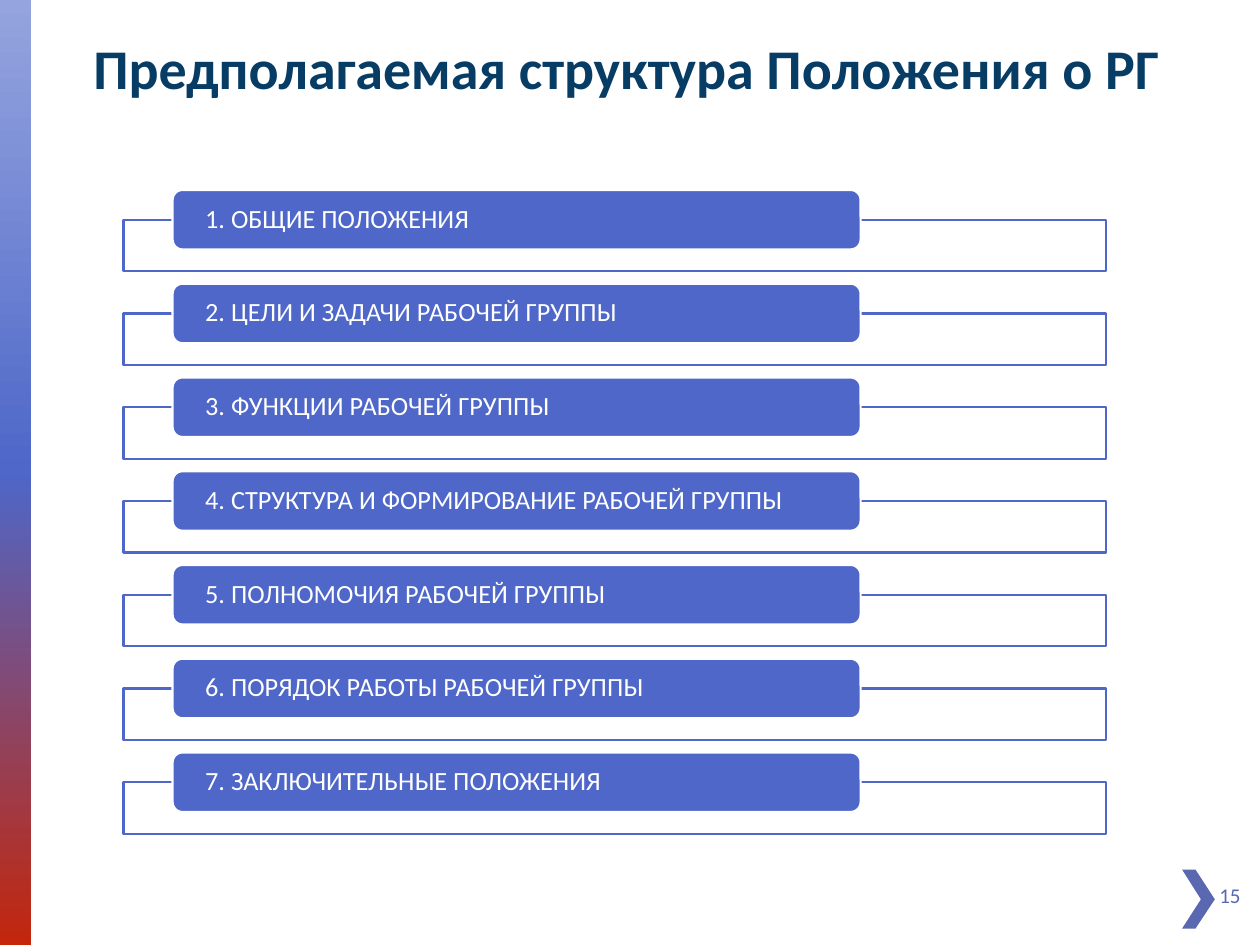
from copy import deepcopy
from dataclasses import dataclass

from lxml import etree
from pptx import Presentation, util as u
from pptx.dml.color import RGBColor
from pptx.enum import shapes, text
from pptx.oxml import ns

COLORS = {
    "blue": "4E67C8",
    "light_blue": "95A4DE",
    "red": "C3260C",
    "marker": "5968B0",
    "title": "073C65",
    "white": "FFFFFF",
}
FONT = "Calibri"
ROW_PITCH = 1.89
SECTIONS = [
    "ОБЩИЕ ПОЛОЖЕНИЯ",
    "ЦЕЛИ И ЗАДАЧИ РАБОЧЕЙ ГРУППЫ",
    "ФУНКЦИИ РАБОЧЕЙ ГРУППЫ",
    "СТРУКТУРА И ФОРМИРОВАНИЕ РАБОЧЕЙ ГРУППЫ",
    "ПОЛНОМОЧИЯ РАБОЧЕЙ ГРУППЫ",
    "ПОРЯДОК РАБОТЫ РАБОЧЕЙ ГРУППЫ",
    "ЗАКЛЮЧИТЕЛЬНЫЕ ПОЛОЖЕНИЯ",
]


@dataclass(frozen=True)
class Box:
    left: float
    top: float
    width: float
    height: float

    def lengths(self) -> tuple:
        return tuple(u.Cm(v) for v in (self.left, self.top, self.width, self.height))


@dataclass(frozen=True)
class TextStyle:
    size: int
    color: str
    bold: bool = False
    align: text.PP_ALIGN = text.PP_ALIGN.LEFT
    anchor: text.MSO_ANCHOR = text.MSO_ANCHOR.MIDDLE


@dataclass(frozen=True)
class Section:
    number: int
    name: str

    @property
    def offset(self) -> float:
        return (self.number - 1) * ROW_PITCH


def rgb(name: str) -> RGBColor:
    return RGBColor.from_string(COLORS[name])


def write(shape, words: str, style: TextStyle):
    frame = shape.text_frame
    frame.word_wrap = True
    frame.vertical_anchor = style.anchor
    paragraph = frame.paragraphs[0]
    paragraph.alignment = style.align
    run = paragraph.add_run()
    run.text = words
    run.font.name = FONT
    run.font.size = u.Pt(style.size)
    run.font.bold = style.bold
    run.font.color.rgb = rgb(style.color)
    return paragraph


def add_text(slide, box: Box, words: str, style: TextStyle) -> None:
    write(slide.shapes.add_textbox(*box.lengths()), words, style)


def add_box(slide, kind: shapes.MSO_SHAPE, box: Box, fill: str, line: str):
    shape = slide.shapes.add_shape(kind, *box.lengths())
    shape.shadow.inherit = False
    shape.fill.solid()
    shape.fill.fore_color.rgb = rgb(fill)
    shape.line.color.rgb = rgb(line)
    shape.line.width = u.Pt(1.25)
    return shape


def add_side_band(slide) -> None:
    box = Box(0, 0, 0.63, 19.05)
    shape = slide.shapes.add_shape(shapes.MSO_SHAPE.RECTANGLE, *box.lengths())
    shape.shadow.inherit = False
    shape.line.fill.background()
    shape.fill.gradient()
    shape.fill.gradient_angle = 270
    stop_list = shape._element.spPr.find(".//" + ns.qn("a:gsLst"))
    stop_list.append(deepcopy(stop_list[0]))
    stops = zip(shape.fill.gradient_stops, ("light_blue", "blue", "red"), (0, 0.5, 1))
    for stop, color, position in stops:
        stop.color.rgb = rgb(color)
        stop.position = position


def add_chevron(slide) -> None:
    outline = [(24.1, 17.53), (23.83, 17.53), (24.21, 18.13),
               (23.83, 18.72), (24.1, 18.72), (24.49, 18.13)]
    points = [(u.Cm(x), u.Cm(y)) for x, y in outline]
    builder = slide.shapes.build_freeform(*points[0])
    builder.add_line_segments(points[1:], close=True)
    shape = builder.convert_to_shape()
    shape.shadow.inherit = False
    shape.fill.solid()
    shape.fill.fore_color.rgb = rgb("marker")
    shape.line.fill.background()


def add_section(slide, section: Section) -> None:
    frame = add_box(slide, shapes.MSO_SHAPE.RECTANGLE,
                    Box(2.49, 4.43 + section.offset, 19.81, 1.04), "white", "blue")
    color = frame._element.spPr.find(ns.qn("a:solidFill"))[0]
    etree.SubElement(color, ns.qn("a:alpha"), val="90000")
    label = add_box(slide, shapes.MSO_SHAPE.ROUNDED_RECTANGLE,
                    Box(3.48, 3.83 + section.offset, 13.87, 1.2), "blue", "white")
    label.text_frame.margin_left = label.text_frame.margin_right = u.Cm(0.6)
    label.text_frame.margin_top = label.text_frame.margin_bottom = 0
    paragraph = write(label, f"{section.number}. {section.name}", TextStyle(15, "white"))
    paragraph.line_spacing = 0.9


def main() -> None:
    """Build the slide listing the sections of the working group regulation."""
    presentation = Presentation()
    presentation.slide_width, presentation.slide_height = u.Cm(25.4), u.Cm(19.05)
    slide = presentation.slides.add_slide(presentation.slide_layouts[6])
    add_side_band(slide)
    add_chevron(slide)
    add_text(slide, Box(24.33, 17.53, 1.07, 1.02), "15", TextStyle(12, "marker"))
    add_text(slide, Box(0.74, 0.56, 23.8, 1.63), "Предполагаемая структура Положения о РГ",
             TextStyle(32, "title", True, text.PP_ALIGN.CENTER, text.MSO_ANCHOR.TOP))
    for number, name in enumerate(SECTIONS, 1):
        add_section(slide, Section(number, name))
    presentation.save("out.pptx")


if __name__ == "__main__":
    main()
